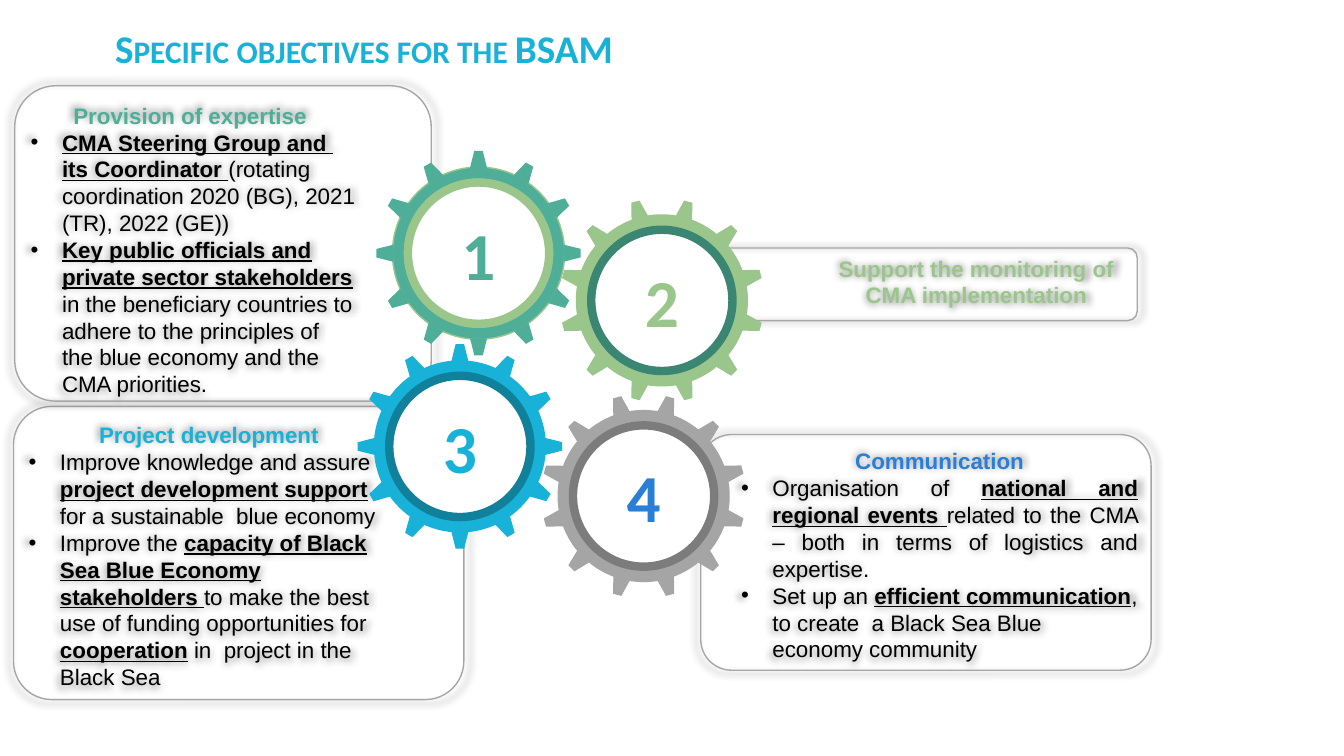
import math
from lxml import etree
from pptx import Presentation
from pptx import util as u
from pptx.dml.color import RGBColor
from pptx.enum import shapes, text
from pptx.oxml import ns

Kind = shapes.MSO_SHAPE
Align = text.PP_ALIGN
GREEN, LIME, BLUE, NAVY, GREY = "4EAE98", "9BC68B", "18B1D7", "297FD5", "A5A5A5"

GEARS = [
    ("1", 12.06, 6.38, 0, GREEN, LIME, LIME, GREEN),
    ("2", 16.68, 7.57, 15, LIME, None, "3B8573", LIME),
    ("3", 11.59, 11.25, 0, BLUE, None, "11819B", BLUE),
    ("4", 16.22, 12.5, 15, GREY, None, "7C7C7C", NAVY),
]

BOXES = [
    ((17.86, 6.25, 10.8, 1.83), (2.79, 0.1),
     "Support the monitoring of CMA implementation", LIME, []),
    ((17.66, 10.95, 11.35, 5.94), (0.79, 0.1), "Communication", NAVY, [
        (Align.JUSTIFY, "Organisation of |national and regional events |related to "
         "the CMA – both in terms of logistics and expertise."),
        (Align.LEFT, "Set up an |efficient communication|, to create  a Black Sea "
         "Blue economy community"),
    ]),
    ((0.34, 10.24, 11.35, 7.39), (0.1, 1.6), "Project development", BLUE, [
        (Align.LEFT, "Improve knowledge and assure |project development support |"
         "for a sustainable  blue economy"),
        (Align.LEFT, "Improve the |capacity of Black Sea Blue Economy stakeholders |"
         "to make the best use of funding opportunities for |cooperation| in  "
         "project in the Black Sea"),
    ]),
    ((0.37, 2.16, 10.5, 7.95), (0.1, 1.6), "Provision of expertise ", GREEN, [
        (Align.LEFT, "|CMA Steering Group and  its Coordinator |(rotating "
         "coordination 2020 (BG), 2021 (TR), 2022 (GE))"),
        (Align.LEFT, "|Key public officials and private sector stakeholders |in the "
         "beneficiary countries to adhere to the principles of the blue economy "
         "and the CMA priorities."),
    ]),
]


def rgb(code):
    return RGBColor.from_string(code)


def put(item, **vals):
    for name, val in vals.items():
        setattr(item, name, val)


def node(root, tag, **vals):
    return etree.SubElement(root, ns.qn(tag), vals)


def write(para, words, size, face, color, bold=True, line=False):
    run = para.add_run()
    run.text = words
    put(run.font, size=u.Pt(size), name=face, bold=bold, underline=line)
    run.font.color.rgb = rgb(color)
    return run


def shape(slide, kind, area, fill=None, line=None, width=1):
    item = slide.shapes.add_shape(kind, *map(u.Cm, area))
    item.shadow.inherit = False
    if fill:
        item.fill.solid()
        item.fill.fore_color.rgb = rgb(fill)
    else:
        item.fill.background()
    if line:
        item.line.color.rgb = rgb(line)
        item.line.width = u.Pt(width)
    else:
        item.line.fill.background()
    return item


def disc(slide, kind, x, y, size, *style):
    return shape(slide, kind, (x - size / 2, y - size / 2, size, size), *style)


def glow(item):
    root = item._element.spPr.find(ns.qn("a:effectLst"))
    cast = node(root, "a:outerShdw", blurRad="63500", sx="102000", sy="102000",
                algn="ctr", rotWithShape="0")
    node(node(cast, "a:srgbClr", val="000000"), "a:alpha", val="40000")


def bullet(para):
    props = para._p.get_or_add_pPr()
    props.set("marL", str(u.Cm(0.79)))
    props.set("indent", str(u.Cm(-0.79)))
    node(props, "a:buFont", typeface="Arial")
    node(props, "a:buChar", char="•")


def box(slide, area, sides, head, color, points):
    item = shape(slide, Kind.ROUNDED_RECTANGLE, area, None, "A6A6A6")
    item.adjustments[0] = 0.131
    glow(item)
    frame = item.text_frame
    left, right = map(u.Cm, sides)
    put(frame, word_wrap=True, vertical_anchor=text.MSO_ANCHOR.TOP, margin_left=left,
        margin_right=right, margin_top=u.Cm(0.1), margin_bottom=u.Cm(0.13))
    para = frame.paragraphs[0]
    para.alignment = Align.CENTER
    write(para, head, 16, "Arial", color)
    for align, words in points:
        para = frame.add_paragraph()
        para.alignment = align
        bullet(para)
        for k, part in enumerate(words.split("|")):
            if part:
                write(para, part, 16, "Arial", "000000", k % 2 == 1, k % 2 == 1)


def gear(slide, label, x, y, turn, fill, edge, ring, ink):
    wheel = disc(slide, Kind.DONUT, x, y, 4.34, fill, edge)
    wheel.adjustments[0] = 0.071
    wheel.rotation = turn
    for angle in range(turn, 360 + turn, 30):
        rad = math.radians(angle)
        tooth = disc(slide, Kind.TRAPEZOID, x + 2.36 * math.sin(rad),
                     y - 2.36 * math.cos(rad), 0.43, fill)
        tooth.rotation = angle
    hub = disc(slide, Kind.OVAL, x, y, 3.56, "FFFFFF", ring, 6)
    hub.text_frame.vertical_anchor = text.MSO_ANCHOR.MIDDLE
    para = hub.text_frame.paragraphs[0]
    para.alignment = Align.CENTER
    write(para, label, 48, "Calibri", ink)


def title(slide, words):
    item = slide.shapes.add_textbox(*map(u.Cm, (2.65, 0.48, 24.89, 1.45)))
    item.text_frame.word_wrap = True
    run = write(item.text_frame.paragraphs[0], words, 28, "Calibri", BLUE)
    run._r.get_or_add_rPr().set("cap", "small")


def main():
    deck = Presentation()
    put(deck, slide_width=u.Cm(33.87), slide_height=u.Cm(19.05))
    slide = deck.slides.add_slide(deck.slide_layouts[6])
    title(slide, "Specific objectives for the BSAM")
    for data in BOXES:
        box(slide, *data)
    for data in GEARS:
        gear(slide, *data)
    deck.save("out.pptx")


if __name__ == "__main__":
    main()
